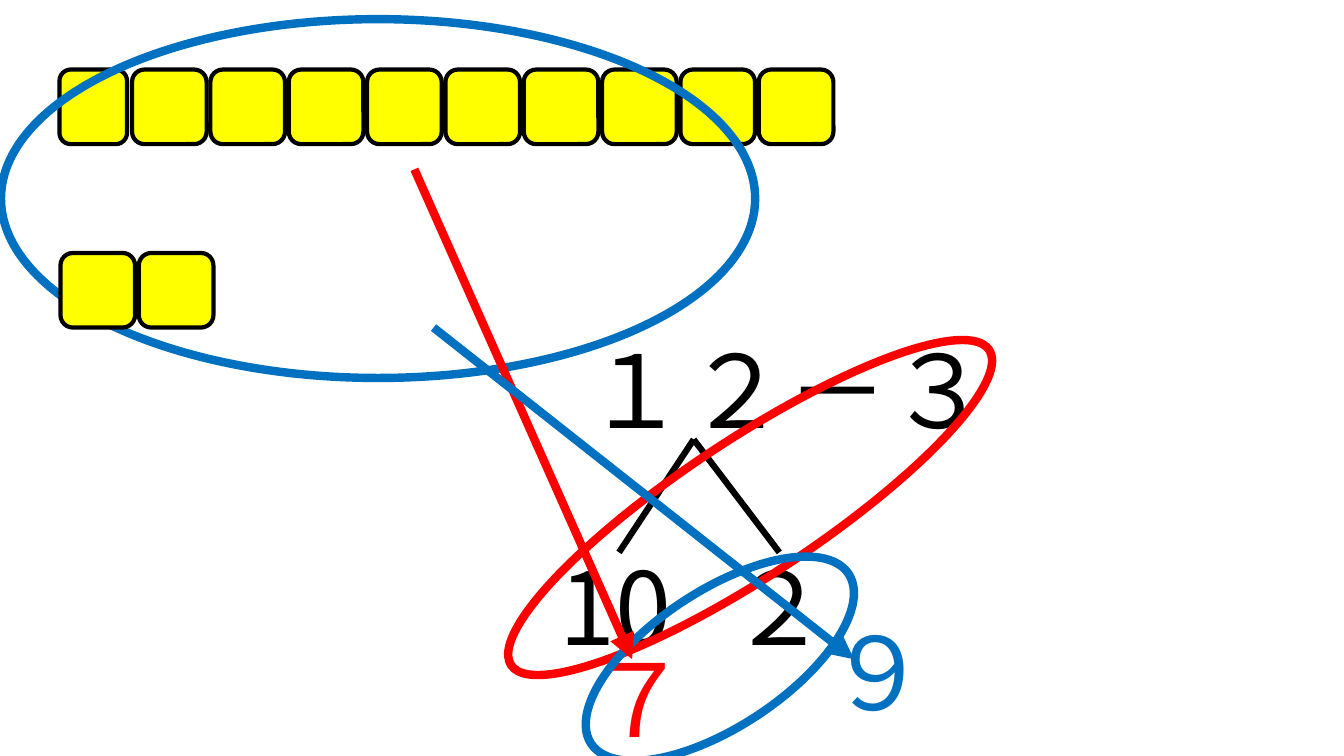
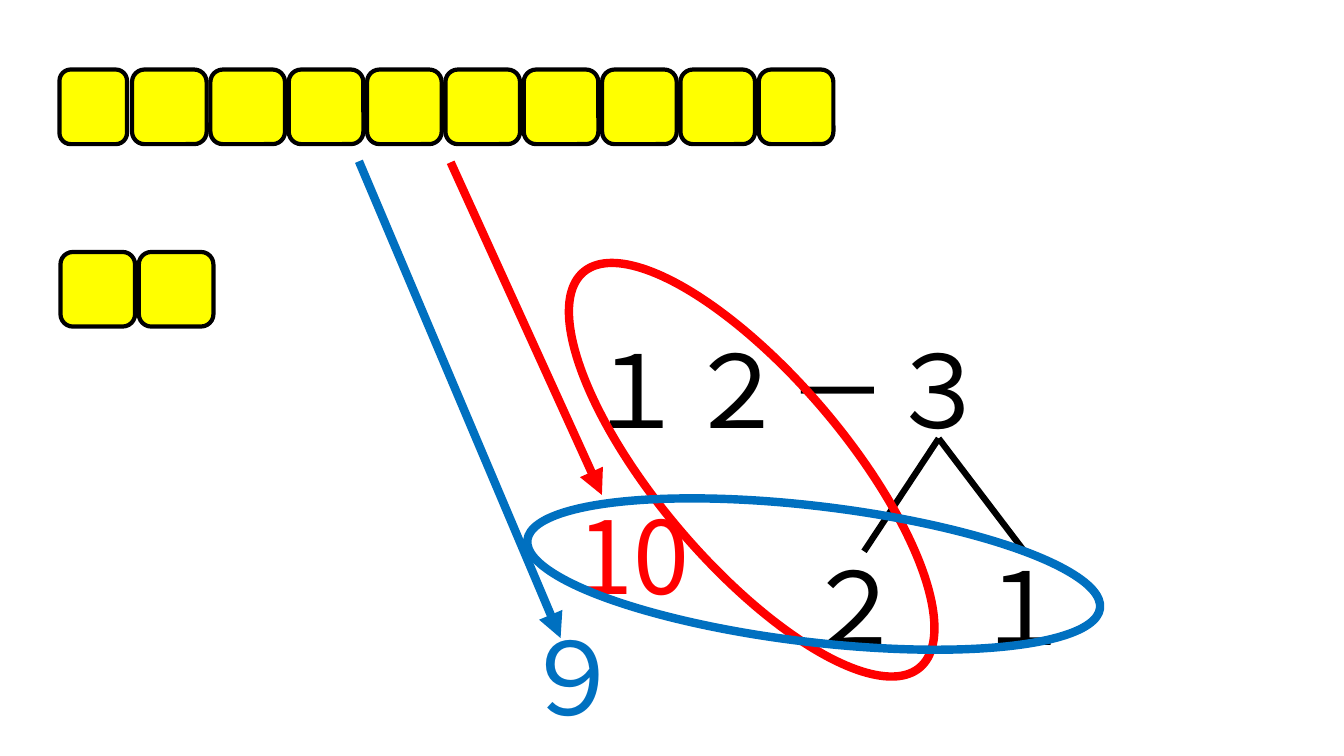
from lxml import etree
from pptx import Presentation
from pptx.dml.color import RGBColor
from pptx.enum import shapes, text
from pptx.oxml import ns
from pptx.util import Inches, Pt

FONT = "Noto Sans CJK JP"
BLACK, RED, BLUE, YELLOW = "000000", "FF0000", "0070C0", "FFFF00"
SIDE, PITCH = 0.74, 0.777


def paint(target, color):
    target.rgb = RGBColor.from_string(color)


def stroke(line, color, width):
    line.fill.solid()
    paint(line.fill.fore_color, color)
    line.width = Pt(width)


def label(slide, words, x, y, color=BLACK, width=1.54, size=72):
    box = slide.shapes.add_textbox(Inches(x), Inches(y), Inches(width), Inches(1.31))
    frame = box.text_frame
    frame.word_wrap = True
    frame.auto_size = text.MSO_AUTO_SIZE.SHAPE_TO_FIT_TEXT
    run = frame.paragraphs[0].add_run()
    run.text = words
    run.font.size = Pt(size)
    run.font.name = FONT
    paint(run.font.color, color)
    props = run.font._element
    etree.SubElement(props, ns.qn("a:ea"), typeface=FONT)


def shape(slide, kind, x, y, width, height, color, weight):
    item = slide.shapes.add_shape(
        kind, Inches(x), Inches(y), Inches(width), Inches(height))
    item.shadow.inherit = False
    stroke(item.line, color, weight)
    return item


def block(slide, x, y, width=SIDE):
    item = shape(slide, shapes.MSO_SHAPE.ROUNDED_RECTANGLE,
                 x, y, width, SIDE, BLACK, 3)
    item.fill.solid()
    paint(item.fill.fore_color, YELLOW)


def ring(slide, x, y, width, height, color, turn=0):
    item = shape(slide, shapes.MSO_SHAPE.OVAL, x, y, width, height, color, 6)
    item.fill.background()
    item.rotation = turn


def line(slide, start, end, color=BLACK, width=4.5, arrow=False):
    points = [Inches(v) for v in (*start, *end)]
    item = slide.shapes.add_connector(shapes.MSO_CONNECTOR.STRAIGHT, *points)
    stroke(item.line, color, width)
    props = item._element.spPr
    if arrow:
        etree.SubElement(props.find(ns.qn("a:ln")), ns.qn("a:tailEnd"), type="triangle")
    etree.SubElement(props, ns.qn("a:effectLst"))


def arrow(slide, start, end, color):
    line(slide, start, end, color, 6, True)


def tens(slide):
    block(slide, 0.59, 0.69, 0.67)
    for i in range(9):
        block(slide, 1.31 + i * PITCH, 0.69)


def ones(slide, y):
    for i in range(2):
        block(slide, 0.6 + i * PITCH, y)


def split(slide, x, y, left, right):
    for shift in (-0.74, 0.85):
        line(slide, (x, y), (x + shift, y + 1.12))
    label(slide, left, x - 1.43, 5.35)
    label(slide, right, x + 0.25, 5.35)


def start(deck):
    slide = deck.slides.add_slide(deck.slide_layouts[6])
    tens(slide)
    label(slide, "１２－３", 5.71, 3.2, width=6.44)
    return slide


def first(deck):
    slide = start(deck)
    split(slide, 6.88, 4.36, "10", "２")
    ring(slide, 4.6, 4.36, 5.68, 1.35, RED, 326.6)
    label(slide, "７", 5.74, 6.27, RED)
    ring(slide, 5.61, 5.86, 3.06, 1.35, BLUE, 326.6)
    label(slide, "９", 8.11, 6, BLUE)
    ring(slide, 0.01, 0.19, 7.48, 3.56, BLUE)
    arrow(slide, (4.11, 1.68), (6.27, 6.54), RED)
    arrow(slide, (4.3, 3.25), (8.47, 6.54), BLUE)
    ones(slide, 2.51)


def second(deck):
    slide = start(deck)
    split(slide, 9.31, 4.35, "２", "１")
    ring(slide, 4.88, 3.73, 5.15, 1.86, RED, 49.6)
    label(slide, "10", 5.63, 4.85, RED)
    ring(slide, 5.21, 5.02, 5.72, 1.35, BLUE, 6.8)
    label(slide, "９", 5.08, 6.05, BLUE)
    arrow(slide, (4.47, 1.61), (5.97, 4.91), RED)
    arrow(slide, (3.56, 1.6), (5.56, 6.33), BLUE)
    ones(slide, 2.5)


def main():
    deck = Presentation()
    deck.slide_width, deck.slide_height = Inches(13.33), Inches(7.5)
    first(deck)
    second(deck)
    deck.save("out.pptx")


if __name__ == "__main__":
    main()
